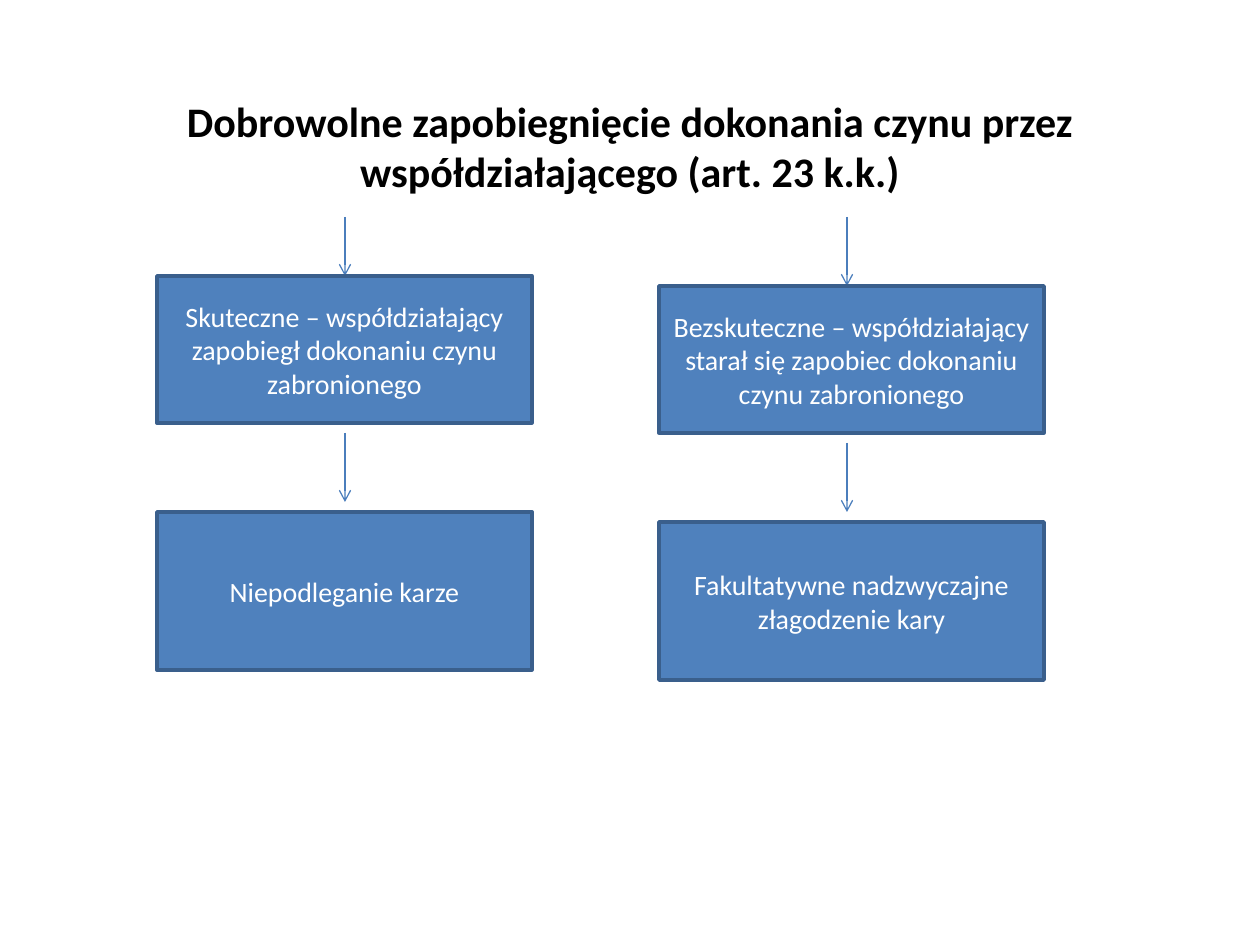
"""Builds a slide with two branches of boxes and arrows under a title."""
from lxml import etree
from pptx import Presentation
from pptx.dml.color import RGBColor
from pptx.enum.shapes import MSO_CONNECTOR, MSO_SHAPE
from pptx.enum.text import MSO_ANCHOR, PP_ALIGN
from pptx.oxml.ns import qn
from pptx.util import Emu, Pt

RECT = MSO_SHAPE.RECTANGLE
STRAIGHT = MSO_CONNECTOR.STRAIGHT
MIDDLE = MSO_ANCHOR.MIDDLE
CENTER = PP_ALIGN.CENTER
FONT = "Calibri"
BRANCHES = [
    (157, 375, 0, 345,
     "Skuteczne – współdziałający zapobiegł dokonaniu czynu zabronionego",
     "Niepodleganie karze"),
    (659, 385, 10, 847,
     "Bezskuteczne – współdziałający starał się zapobiec dokonaniu czynu zabronionego",
     "Fakultatywne nadzwyczajne złagodzenie kary"),
]


def px(n):
    """Turn pixels into EMU."""
    return Emu(round(n * 914400 / 126))


def rgb(value):
    """Turn a hex string into a colour."""
    return RGBColor.from_string(value)


def set_text(sp, text, size, color, bold=False):
    """Write one centred run into a shape."""
    tf = sp.text_frame
    tf.word_wrap = True
    tf.vertical_anchor = MIDDLE
    p = tf.paragraphs[0]
    p.alignment = CENTER
    r = p.add_run()
    r.text = text
    r.font.name = FONT
    r.font.size = Pt(size)
    r.font.bold = bold
    r.font.color.rgb = rgb(color)


def add_title(s, text):
    """Add the slide title."""
    sp = s.shapes.add_textbox(px(63), px(37), px(1134), px(217))
    set_text(sp, text, 24, "000000", True)


def add_box(s, x, y, w, h, text):
    """Add a filled box with centred text."""
    sp = s.shapes.add_shape(RECT, px(x), px(y), px(w), px(h))
    sp.shadow.inherit = False
    sp.fill.solid()
    sp.fill.fore_color.rgb = rgb("4F81BD")
    sp.line.color.rgb = rgb("3A5F8C")
    sp.line.width = Pt(2)
    set_text(sp, text, 16, "FFFFFF")


def add_arrow(s, x, top, bottom):
    """Add a thin arrow pointing down."""
    cn = s.shapes.add_connector(STRAIGHT, px(x), px(top), px(x), px(bottom))
    cn.line.color.rgb = rgb("4B7EBC")
    cn.line.width = Pt(0.75)
    etree.SubElement(cn.line._get_or_add_ln(), qn("a:tailEnd"), type="arrow")
    etree.SubElement(cn._element.spPr, qn("a:effectLst"))


def add_branch(s, x, w, dy, axis, condition, result):
    """Add a column of two boxes, each below an arrow."""
    add_arrow(s, axis, 217, 276 + dy)
    add_box(s, x, 276 + dy, w, 147, condition)
    add_arrow(s, axis, 433 + dy, 502 + dy)
    add_box(s, x, 512 + dy, w, 158, result)


def main():
    """Build and save the slide."""
    prs = Presentation()
    prs.slide_width, prs.slide_height = px(1260), px(945)
    s = prs.slides.add_slide(prs.slide_layouts[6])
    add_title(s, "Dobrowolne zapobiegnięcie dokonania czynu przez "
                 "współdziałającego (art. 23 k.k.)")
    for branch in BRANCHES:
        add_branch(s, *branch)
    prs.save("out.pptx")


if __name__ == "__main__":
    main()
